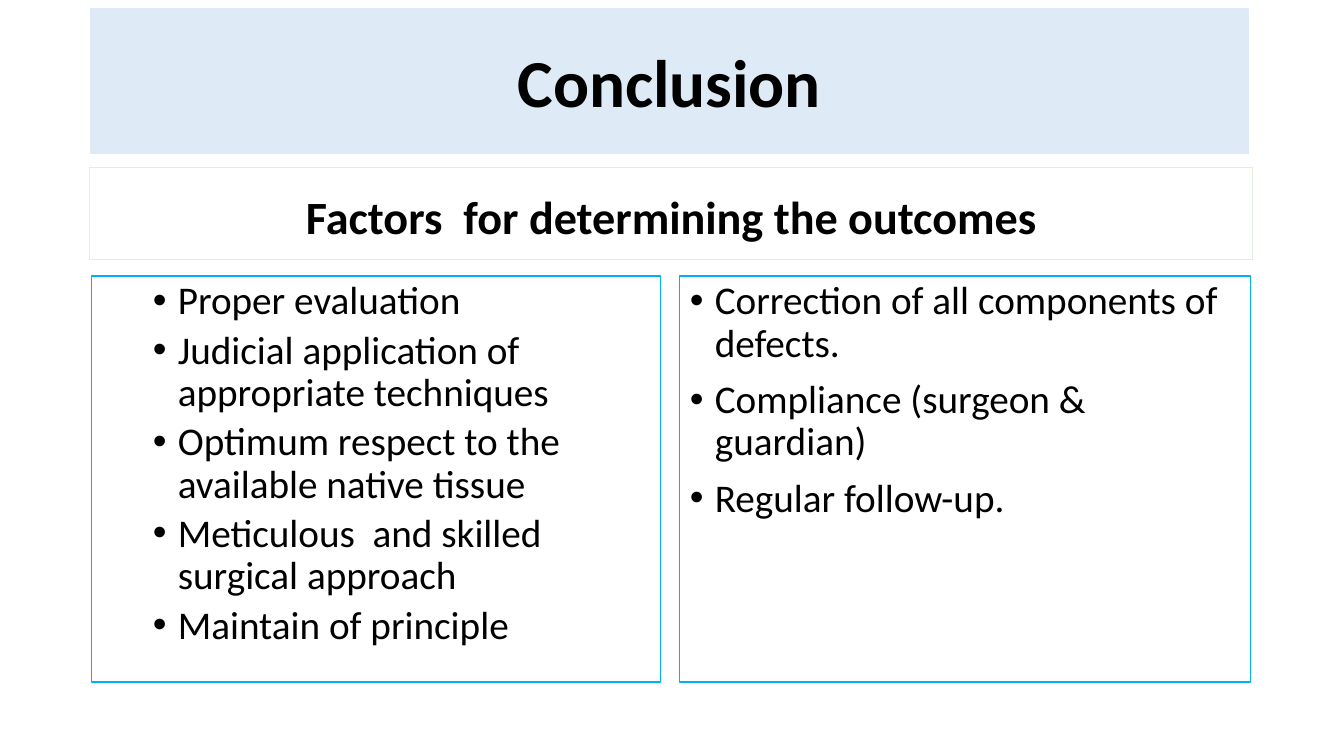
from pptx import Presentation
from pptx.dml.color import RGBColor
from pptx.enum.text import MSO_ANCHOR, MSO_AUTO_SIZE, PP_ALIGN
from pptx.oxml.ns import qn
from pptx.util import Pt
from lxml import etree

BLACK = RGBColor(0x00, 0x00, 0x00)
PALE = RGBColor(0xDE, 0xEB, 0xF7)
GREEN = RGBColor(0xE2, 0xF0, 0xD9)
CYAN = RGBColor(0x00, 0xB0, 0xF0)
LEFT, CENTER = PP_ALIGN.LEFT, PP_ALIGN.CENTER
TOP, MIDDLE = MSO_ANCHOR.TOP, MSO_ANCHOR.MIDDLE
FIXED = MSO_AUTO_SIZE.NONE
FONT = "Calibri"
SCALE = 914400 / 100.8
HANG = 25

FACTORS = [
    "Proper evaluation",
    "Judicial application of appropriate techniques",
    "Optimum respect to the available native tissue",
    "Meticulous  and skilled surgical approach",
    "Maintain of principle",
]
CARE = [
    "Correction of all components of defects.",
    "Compliance (surgeon & guardian)",
    "Regular follow-up.",
]


def px(count):
    """Turn px into EMU."""
    return round(count * SCALE)


def write(shape, lines, size=28, bold=False, align=LEFT, anchor=TOP,
          gap=0, pitch=1.0, indent=None):
    """Fill a shape with formatted paragraphs."""
    frame = shape.text_frame
    frame.auto_size = FIXED
    frame.word_wrap = True
    frame.vertical_anchor = anchor
    frame.text = "\n".join(lines)
    for index, para in enumerate(frame.paragraphs):
        para.alignment = align
        para.line_spacing = pitch
        para.space_before = Pt(gap if index else 0)
        if indent is not None:
            props = para._p.get_or_add_pPr()
            props.set("marL", str(px(indent)))
            props.set("indent", str(-px(HANG)))
            etree.SubElement(props, qn("a:buFont")).set("typeface", "Arial")
            etree.SubElement(props, qn("a:buChar")).set("char", "•")
        font = para.font
        font.name, font.size, font.bold = FONT, Pt(size), bold
        font.color.rgb = BLACK


class Deck:
    """Hold the file and the current slide."""

    def __init__(self):
        """Open a wide deck with one titled slide."""
        self.file = Presentation()
        self.file.slide_width, self.file.slide_height = px(1344), px(756)
        self.slide = self.file.slides.add_slide(self.file.slide_layouts[5])

    def title(self, text, left, top, width, height):
        """Place the title on its band."""
        band = self.slide.shapes.title
        band.left, band.top = px(left), px(top)
        band.width, band.height = px(width), px(height)
        band.fill.solid()
        band.fill.fore_color.rgb = PALE
        write(band, [text], size=48, bold=True, align=CENTER, anchor=MIDDLE)

    def box(self, lines, left, top, width, height, edge, **style):
        """Add a framed text box."""
        box = self.slide.shapes.add_textbox(
            px(left), px(top), px(width), px(height))
        box.line.color.rgb = edge
        box.line.width = Pt(0.75)
        write(box, lines, **style)
        return box


def main():
    """Build the conclusion slide."""
    deck = Deck()
    deck.title("Conclusion", 90, 8, 1159, 146)
    head = deck.box(["Factors  for determining the outcomes"],
                    90, 168, 1163, 92, GREEN,
                    size=33, bold=True, align=CENTER, anchor=MIDDLE)
    head.text_frame.margin_top = px(10)
    deck.box(FACTORS, 92, 276, 569, 406, CYAN, gap=5, pitch=0.9, indent=76)
    deck.box(CARE, 680, 276, 571, 406, CYAN, gap=10, pitch=0.9, indent=HANG)
    deck.file.save("out.pptx")


if __name__ == "__main__":
    main()
